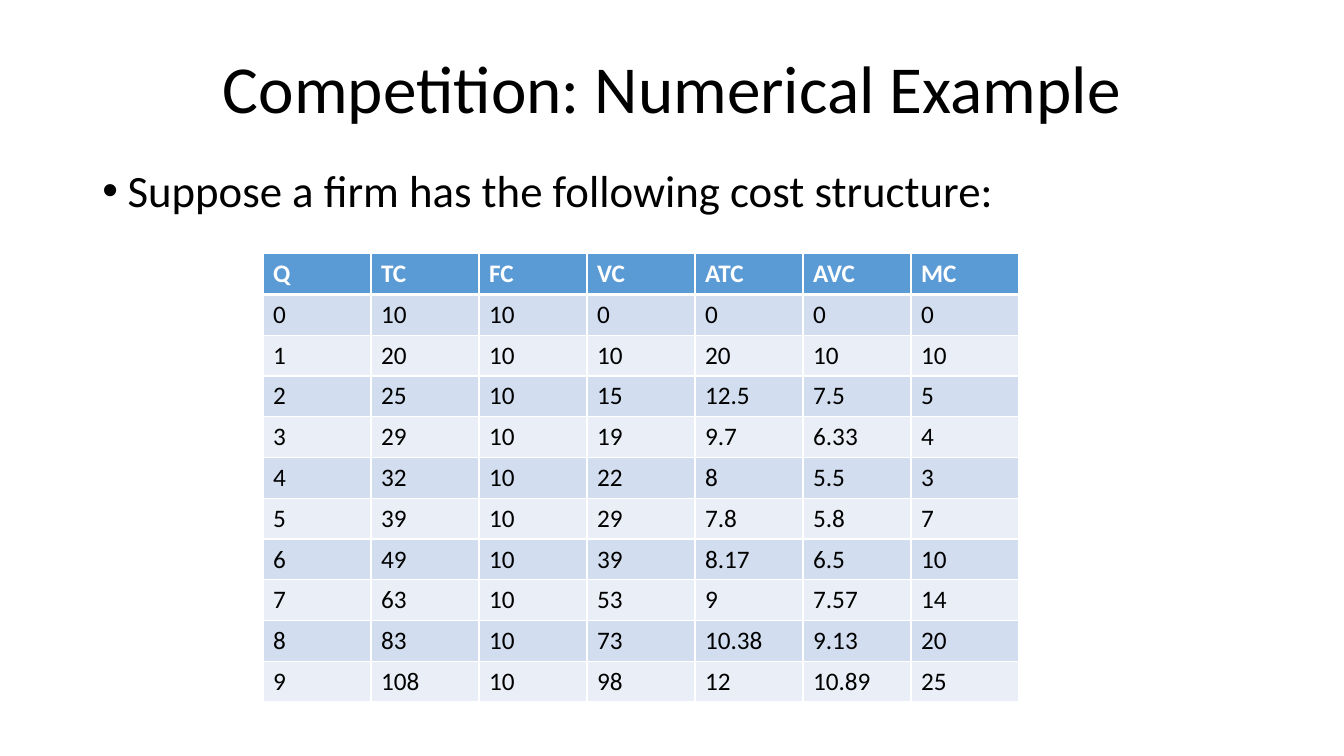
import dataclasses

import pptx
import pptx.dml.color
import pptx.enum.text
import pptx.oxml
import pptx.oxml.ns
import pptx.util

SLIDE_W, SLIDE_H = 13.33, 7.5
UNIT = 1 / 12  # grid pitch in inches, for columns and rows alike


@dataclasses.dataclass(frozen=True)
class Theme:
    font: str = "Calibri"
    text: str = "000000"
    light: str = "FFFFFF"
    header: str = "5B9BD5"
    bands: tuple = ("D2DEEF", "EAEFF7")
    title_size: int = 48
    body_size: int = 32
    cell_size: int = 18
    rule: int = 1
    header_rule: int = 3


THEME = Theme()

COSTS = [
    ("Q", "TC", "FC", "VC", "ATC", "AVC", "MC"),
    ("0", "10", "10", "0", "0", "0", "0"),
    ("1", "20", "10", "10", "20", "10", "10"),
    ("2", "25", "10", "15", "12.5", "7.5", "5"),
    ("3", "29", "10", "19", "9.7", "6.33", "4"),
    ("4", "32", "10", "22", "8", "5.5", "3"),
    ("5", "39", "10", "29", "7.8", "5.8", "7"),
    ("6", "49", "10", "39", "8.17", "6.5", "10"),
    ("7", "63", "10", "53", "9", "7.57", "14"),
    ("8", "83", "10", "73", "10.38", "9.13", "20"),
    ("9", "108", "10", "98", "12", "10.89", "25"),
]


def grid(*units):
    """Turn grid columns or rows into lengths."""
    return [pptx.util.Inches(n * UNIT) for n in units]


def rgb(value):
    return pptx.dml.color.RGBColor.from_string(value)


def add_run(p, text, size, color, bold=False):
    r = p.add_run()
    r.text = text
    r.font.name = THEME.font
    r.font.size = pptx.util.Pt(size)
    r.font.bold = bold
    r.font.color.rgb = rgb(color)


def set_bullet(p, indent):
    pPr = p._p.get_or_add_pPr()
    pPr.set("marL", str(indent))
    pPr.set("indent", str(-indent))
    ns = pptx.oxml.ns.nsdecls("a")
    pPr.append(pptx.oxml.parse_xml(f'<a:buFont {ns} typeface="Arial"/>'))
    pPr.append(pptx.oxml.parse_xml(f'<a:buChar {ns} char="•"/>'))


def add_text(slide, box, text, size, align, anchor, bullet=False):
    sp = slide.shapes.add_textbox(*grid(*box))
    tf = sp.text_frame
    tf.word_wrap = True
    tf.vertical_anchor = anchor
    p = tf.paragraphs[0]
    p.alignment = align
    p.line_spacing = 0.9
    if bullet:
        set_bullet(p, grid(3)[0])
    add_run(p, text, size, THEME.text)


def set_borders(cell, bottom, top):
    """Draw the white rules; they must come before the cell's fill."""
    tcPr = cell._tc.get_or_add_tcPr()
    widths = {"lnL": THEME.rule, "lnR": THEME.rule, "lnT": top, "lnB": bottom}
    for tag, width in widths.items():
        tcPr.append(pptx.oxml.parse_xml(
            f'<a:{tag} {pptx.oxml.ns.nsdecls("a")} w="{pptx.util.Pt(width)}">'
            f'<a:solidFill><a:srgbClr val="{THEME.light}"/></a:solidFill></a:{tag}>'))


def add_cost_table(slide, box, rows):
    frame = slide.shapes.add_table(len(rows), len(rows[0]), *grid(*box))
    table = frame.table
    for i, row in enumerate(rows):
        is_header = i == 0
        fill = THEME.header if is_header else THEME.bands[(i - 1) % 2]
        color = THEME.light if is_header else THEME.text
        bottom = THEME.header_rule if is_header else THEME.rule
        top = THEME.header_rule if i == 1 else THEME.rule
        for j, value in enumerate(row):
            cell = table.cell(i, j)
            set_borders(cell, bottom, top)
            cell.fill.solid()
            cell.fill.fore_color.rgb = rgb(fill)
            add_run(cell.text_frame.paragraphs[0], value, THEME.cell_size, color, is_header)


def main():
    prs = pptx.Presentation()
    prs.slide_width = pptx.util.Inches(SLIDE_W)
    prs.slide_height = pptx.util.Inches(SLIDE_H)
    slide = prs.slides.add_slide(prs.slide_layouts[6])
    align, anchor = pptx.enum.text.PP_ALIGN, pptx.enum.text.MSO_ANCHOR

    # Title and lead-in
    add_text(slide, (11, 3.8, 138, 14.2), "Competition: Numerical Example",
             THEME.title_size, align.CENTER, anchor.MIDDLE)
    add_text(slide, (11, 19.5, 138, 57.5), "Suppose a firm has the following cost structure:",
             THEME.body_size, align.LEFT, anchor.TOP, bullet=True)

    # Cost structure
    add_cost_table(slide, (31.3, 30.2, 90, 53.4), COSTS)

    prs.save("out.pptx")


if __name__ == "__main__":
    main()
